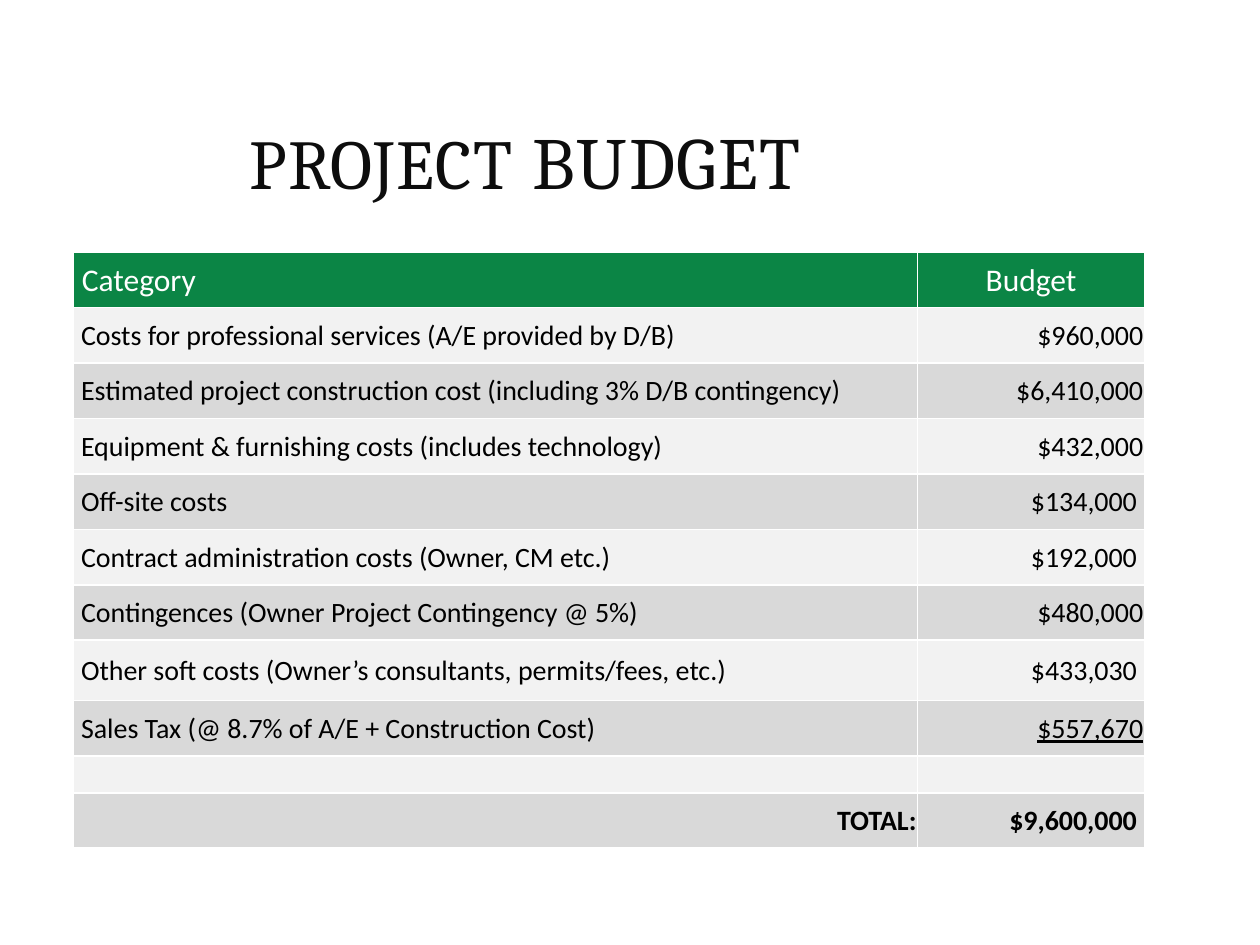
from dataclasses import dataclass
from typing import Any

import pptx
from lxml import etree
from pptx import util as u
from pptx.dml.color import RGBColor
from pptx.enum import text
from pptx.oxml import ns

BLACK = RGBColor(0x00, 0x00, 0x00)
INK = RGBColor(0x0D, 0x0D, 0x0D)
WHITE = RGBColor(0xFF, 0xFF, 0xFF)
GREEN = RGBColor(0x0B, 0x85, 0x45)
LIGHT = RGBColor(0xF2, 0xF2, 0xF2)
GRAY = RGBColor(0xD9, 0xD9, 0xD9)

LEFT, CENTER, RIGHT = text.PP_ALIGN.LEFT, text.PP_ALIGN.CENTER, text.PP_ALIGN.RIGHT
COLUMN_WIDTHS = (482.4, 129.6)
CELL_FORMAT = {
    "margin_left": u.Pt(0.72),
    "margin_right": u.Pt(0.72),
    "margin_top": u.Pt(0.72),
    "margin_bottom": u.Pt(0),
    "vertical_anchor": text.MSO_ANCHOR.MIDDLE,
}
HEADER_FONT = {"name": "Calibri", "size": u.Pt(18), "bold": False}
BODY_FONT = {"name": "Calibri", "size": u.Pt(16), "bold": False}
TOTAL_FONT = BODY_FONT | {"bold": True}
SUM_FONT = BODY_FONT | {"underline": True}


@dataclass
class BudgetRow:
    category: str
    amount: str
    height: float = 31.7
    alignments: tuple = (LEFT, RIGHT)
    category_font: dict[str, Any] | None = None
    amount_font: dict[str, Any] | None = None
    color: RGBColor = BLACK


ROWS = [
    BudgetRow(" Category", "Budget", alignments=(LEFT, CENTER),
              category_font=HEADER_FONT, amount_font=HEADER_FONT, color=WHITE),
    BudgetRow(" Costs for professional services (A/E provided by D/B)", "$960,000"),
    BudgetRow(" Estimated project construction cost (including 3% D/B contingency)",
              "$6,410,000"),
    BudgetRow(" Equipment & furnishing costs (includes technology)", "$432,000"),
    BudgetRow(" Off-site costs", "$134,000 "),
    BudgetRow(" Contract administration costs (Owner, CM etc.)", "$192,000 "),
    BudgetRow(" Contingences (Owner Project Contingency @ 5%)", "$480,000"),
    BudgetRow(" Other soft costs (Owner’s consultants, permits/fees, etc.)",
              "$433,030 ", height=34.6),
    BudgetRow(" Sales Tax (@ 8.7% of A/E + Construction Cost)", "$557,670",
              amount_font=SUM_FONT),
    BudgetRow("", "", height=20.9),
    BudgetRow("TOTAL:", "$9,600,000 ", alignments=(RIGHT, RIGHT),
              category_font=TOTAL_FONT, amount_font=TOTAL_FONT),
]


def apply_format(target: Any, values: dict[str, Any]) -> None:
    for name, value in values.items():
        setattr(target, name, value)


def add_run(paragraph: Any, words: str, font: dict[str, Any], color: RGBColor) -> Any:
    run = paragraph.add_run()
    run.text = words
    apply_format(run.font, font)
    run.font.color.rgb = color
    return run


def add_borders(cell: Any) -> None:
    properties = cell._tc.get_or_add_tcPr()
    for side in ("a:lnL", "a:lnR", "a:lnT", "a:lnB"):
        line = etree.SubElement(properties, ns.qn(side), w=str(u.Pt(1)))
        fill = etree.SubElement(line, ns.qn("a:solidFill"))
        etree.SubElement(fill, ns.qn("a:srgbClr"), val=str(WHITE))


def fill_cell(cell: Any, words: str, alignment: Any, font: dict[str, Any],
              color: RGBColor, background: RGBColor) -> None:
    apply_format(cell, CELL_FORMAT)
    add_borders(cell)
    cell.fill.solid()
    cell.fill.fore_color.rgb = background
    paragraph = cell.text_frame.paragraphs[0]
    paragraph.alignment = alignment
    if words:
        add_run(paragraph, words, font, color)
    else:
        etree.SubElement(paragraph._p, ns.qn("a:endParaRPr"), sz="1200")


def add_title(slide: Any) -> None:
    shape = slide.shapes.add_textbox(u.Pt(0), u.Pt(60), u.Pt(600), u.Pt(72))
    apply_format(shape.text_frame, {
        "word_wrap": True, "vertical_anchor": text.MSO_ANCHOR.MIDDLE})
    paragraph = shape.text_frame.paragraphs[0]
    apply_format(paragraph, {"alignment": CENTER, "line_spacing": 0.8})
    for words, size in (("PROJECT", 40), (" BUDGET", 42)):
        run = add_run(paragraph, words, {"name": "Cambria", "size": u.Pt(size)}, INK)
        run.font._element.set("spc", "100")


def add_budget_table(slide: Any, rows: list[BudgetRow]) -> None:
    height = sum(row.height for row in rows)
    shape = slide.shapes.add_table(len(rows), len(COLUMN_WIDTHS), u.Pt(42), u.Pt(144),
                                   u.Pt(sum(COLUMN_WIDTHS)), u.Pt(height))
    table = shape.table
    for column, width in zip(table.columns, COLUMN_WIDTHS):
        column.width = u.Pt(width)
    for index, row in enumerate(rows):
        table.rows[index].height = u.Pt(row.height)
        background = GREEN if index == 0 else (GRAY, LIGHT)[index % 2]
        contents = zip(table.rows[index].cells, (row.category, row.amount),
                       row.alignments, (row.category_font, row.amount_font))
        for cell, words, alignment, font in contents:
            fill_cell(cell, words, alignment, font or BODY_FONT, row.color, background)


def main() -> None:
    presentation = pptx.Presentation()
    apply_format(presentation, {"slide_width": u.Pt(720), "slide_height": u.Pt(540)})
    slide = presentation.slides.add_slide(presentation.slide_layouts[6])
    add_title(slide)
    add_budget_table(slide, ROWS)
    presentation.save("out.pptx")


if __name__ == "__main__":
    main()
